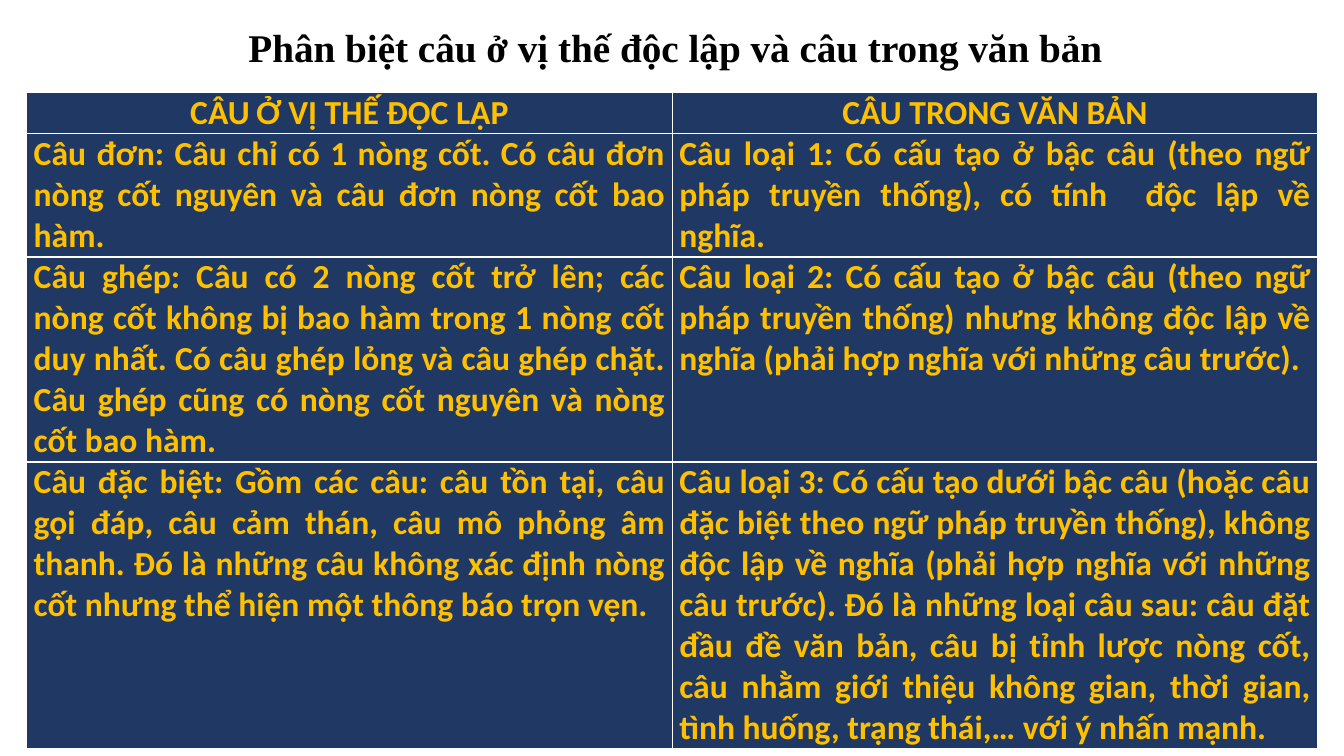
from lxml.etree import SubElement
from pptx import Presentation
from pptx.dml.color import RGBColor
from pptx.enum.text import MSO_ANCHOR, PP_ALIGN
from pptx.oxml import parse_xml
from pptx.oxml.ns import nsdecls
from pptx.util import Cm, Pt

COLORS = {"navy": "203864", "gold": "FFC000", "white": "FFFFFF", "black": "000000"}
ROW_HEIGHTS = [0.84, 2.79, 4.52, 6.38]
COLUMN_WIDTH = 16.27
ROWS = [
    ("CÂU Ở VỊ THẾ ĐỘC LẬP", "CÂU TRONG VĂN BẢN"),
    (
        "Câu đơn: Câu chỉ có 1 nòng cốt. Có câu đơn nòng cốt nguyên và câu đơn "
        "nòng cốt bao hàm.",
        "Câu loại 1: Có cấu tạo ở bậc câu (theo ngữ pháp truyền thống), có tính  "
        "độc lập về nghĩa.",
    ),
    (
        "Câu ghép: Câu có 2 nòng cốt trở lên; các nòng cốt không bị bao hàm trong "
        "1 nòng cốt duy nhất. Có câu ghép lỏng và câu ghép chặt. Câu ghép cũng có "
        "nòng cốt nguyên và nòng cốt bao hàm.",
        "Câu loại 2: Có cấu tạo ở bậc câu (theo ngữ pháp truyền thống) nhưng không "
        "độc lập về nghĩa (phải hợp nghĩa với những câu trước).",
    ),
    (
        "Câu đặc biệt: Gồm các câu: câu tồn tại, câu gọi đáp, câu cảm thán, câu mô "
        "phỏng âm thanh. Đó là những câu không xác định nòng cốt nhưng thể hiện một "
        "thông báo trọn vẹn.",
        "Câu loại 3: Có cấu tạo dưới bậc câu (hoặc câu đặc biệt theo ngữ pháp truyền "
        "thống), không độc lập về nghĩa (phải hợp nghĩa với những câu trước). Đó là "
        "những loại câu sau: câu đặt đầu đề văn bản, câu bị tỉnh lược nòng cốt, câu "
        "nhằm giới thiệu không gian, thời gian, tình huống, trạng thái,… với ý nhấn mạnh.",
    ),
]


def write_paragraph(paragraph, text, alignment, font_name, size, color):
    paragraph.text = text
    paragraph.alignment = alignment
    paragraph.font.name = font_name
    paragraph.font.size = Pt(size)
    paragraph.font.bold = True
    paragraph.font.color.rgb = RGBColor.from_string(COLORS[color])


def add_borders(cell, color):
    properties = cell._tc.get_or_add_tcPr()
    for position, side in enumerate("LRTB"):
        line = parse_xml(f'<a:ln{side} {nsdecls("a")} w="{Pt(1)}"/>')
        fill = SubElement(line, line.tag.replace(f"ln{side}", "solidFill"))
        SubElement(fill, fill.tag.replace("solidFill", "srgbClr"), val=COLORS[color])
        properties.insert(position, line)


presentation = Presentation()
presentation.slide_width = Cm(33.87)
presentation.slide_height = Cm(19.05)
slide = presentation.slides.add_slide(presentation.slide_layouts[6])

table = slide.shapes.add_table(
    len(ROWS), 2, Cm(0.67), Cm(2.34), Cm(2 * COLUMN_WIDTH), Cm(sum(ROW_HEIGHTS))
).table
for column in table.columns:
    column.width = Cm(COLUMN_WIDTH)
for row_index, (texts, height) in enumerate(zip(ROWS, ROW_HEIGHTS)):
    table.rows[row_index].height = Cm(height)
    alignment = PP_ALIGN.JUSTIFY if row_index else PP_ALIGN.CENTER
    for column_index, text in enumerate(texts):
        cell = table.cell(row_index, column_index)
        cell.margin_left = cell.margin_right = Cm(0.18)
        cell.margin_top = cell.margin_bottom = 0
        cell.fill.solid()
        cell.fill.fore_color.rgb = RGBColor.from_string(COLORS["navy"])
        add_borders(cell, "white")
        write_paragraph(
            cell.text_frame.paragraphs[0], text, alignment, "Calibri", 24, "gold"
        )

title = slide.shapes.add_textbox(Cm(3.05), Cm(0.46), Cm(27.94), Cm(1.45))
title.text_frame.word_wrap = True
title.text_frame.vertical_anchor = MSO_ANCHOR.MIDDLE
write_paragraph(
    title.text_frame.paragraphs[0],
    "Phân biệt câu ở vị thế độc lập và câu trong văn bản",
    PP_ALIGN.CENTER,
    "Times New Roman",
    28,
    "black",
)

presentation.save("out.pptx")
